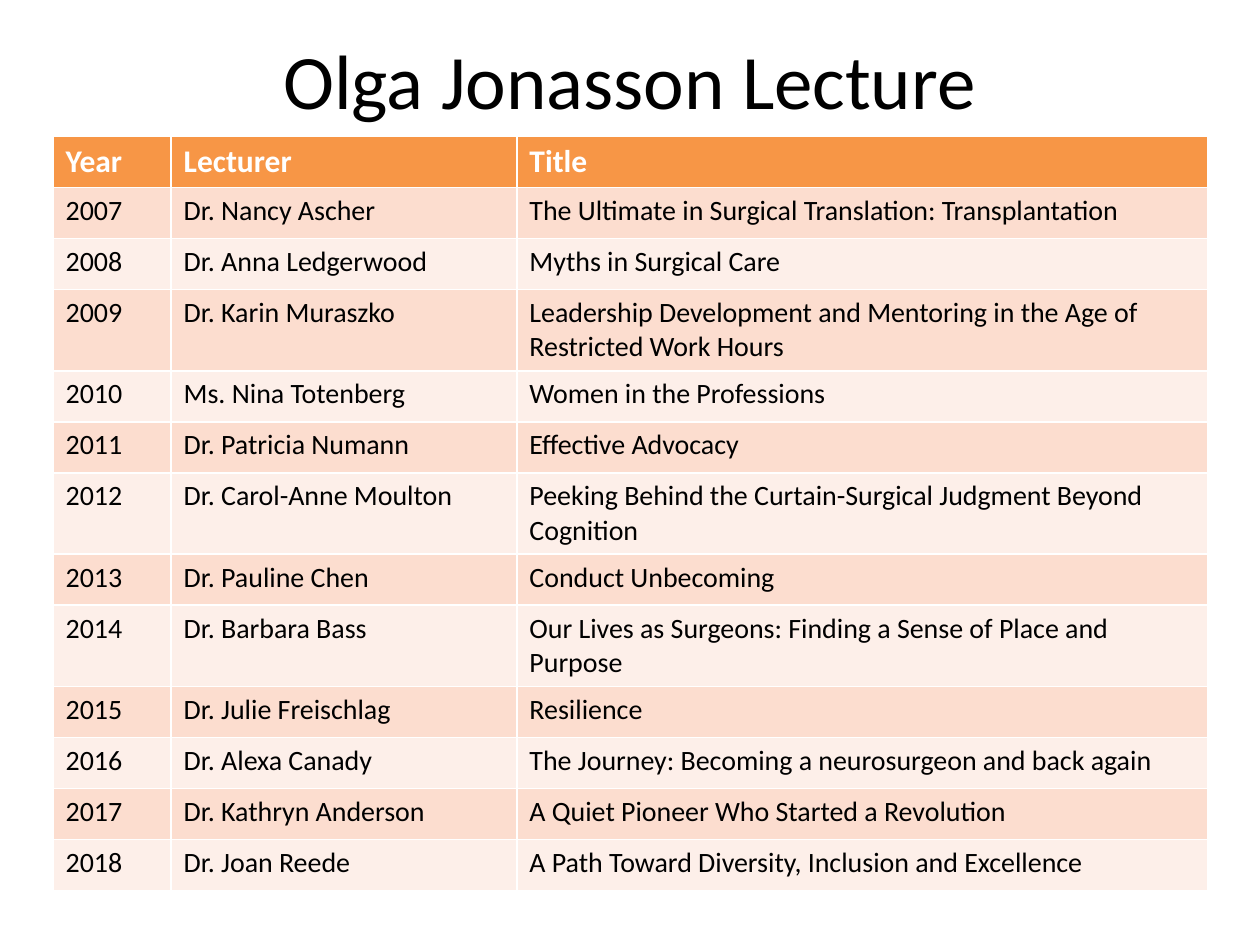
from pptx import Presentation
from pptx.dml.color import RGBColor
from pptx.enum.text import MSO_ANCHOR, PP_ALIGN
from pptx.util import Cm, Pt

HEADING = "Olga Jonasson Lecture"
COLUMNS = ("Year", "Lecturer", "Title")
LECTURES = [
    ("2007", "Dr. Nancy Ascher", "The Ultimate in Surgical Translation: Transplantation"),
    ("2008", "Dr. Anna Ledgerwood", "Myths in Surgical Care"),
    ("2009", "Dr. Karin Muraszko",
     "Leadership Development and Mentoring in the Age of Restricted Work Hours"),
    ("2010", "Ms. Nina Totenberg", "Women in the Professions"),
    ("2011", "Dr. Patricia Numann", "Effective Advocacy"),
    ("2012", "Dr. Carol-Anne Moulton",
     "Peeking Behind the Curtain-Surgical Judgment Beyond Cognition"),
    ("2013", "Dr. Pauline Chen", "Conduct Unbecoming"),
    ("2014", "Dr. Barbara Bass",
     "Our Lives as Surgeons: Finding a Sense of Place and Purpose"),
    ("2015", "Dr. Julie Freischlag", "Resilience"),
    ("2016", "Dr. Alexa Canady", "The Journey: Becoming a neurosurgeon and back again"),
    ("2017", "Dr. Kathryn Anderson", "A Quiet Pioneer Who Started a Revolution"),
    ("2018", "Dr. Joan Reede", "A Path Toward Diversity, Inclusion and Excellence"),
]

FONT = "Calibri"
BLACK = RGBColor(0x00, 0x00, 0x00)
WHITE = RGBColor(0xFF, 0xFF, 0xFF)
ORANGE = RGBColor(0xF7, 0x96, 0x46)
BANDS = (RGBColor(0xFC, 0xDD, 0xCF), RGBColor(0xFD, 0xEF, 0xE9))
LEFT, CENTER = PP_ALIGN.LEFT, PP_ALIGN.CENTER
MIDDLE = MSO_ANCHOR.MIDDLE

COLUMN_WIDTHS = (Cm(2.38), Cm(6.97), Cm(13.93))
ROW_HEIGHT = Cm(1.03)


def write(frame, text, size, color=BLACK, bold=False, align=LEFT):
    paragraph = frame.paragraphs[0]
    paragraph.alignment = align
    run = paragraph.add_run()
    run.text = text
    run.font.name = FONT
    run.font.size = Pt(size)
    run.font.bold = bold
    run.font.color.rgb = color


def fill_row(table, row, texts, fill, **text_format):
    for column, text in enumerate(texts):
        cell = table.cell(row, column)
        cell.fill.solid()
        cell.fill.fore_color.rgb = fill
        write(cell.text_frame, text, **text_format)


def main():
    deck = Presentation()
    deck.slide_width, deck.slide_height = Cm(25.4), Cm(19.05)
    slide = deck.slides.add_slide(deck.slide_layouts[5])

    heading = slide.shapes.title
    heading.left, heading.top = Cm(1.27), Cm(0)
    heading.width, heading.height = Cm(22.86), Cm(3.18)
    heading.text_frame.vertical_anchor = MIDDLE
    write(heading.text_frame, HEADING, size=44, align=CENTER)

    row_count = len(LECTURES) + 1
    lectures = slide.shapes.add_table(
        row_count, len(COLUMNS), Cm(1.07), Cm(2.75),
        sum(COLUMN_WIDTHS), ROW_HEIGHT * row_count).table
    for column, width in zip(lectures.columns, COLUMN_WIDTHS):
        column.width = width
    for row in lectures.rows:
        row.height = ROW_HEIGHT

    fill_row(lectures, 0, COLUMNS, ORANGE, size=18, color=WHITE, bold=True)
    for index, lecture in enumerate(LECTURES):
        fill_row(lectures, index + 1, lecture, BANDS[index % 2], size=16)

    deck.save("out.pptx")


if __name__ == "__main__":
    main()
